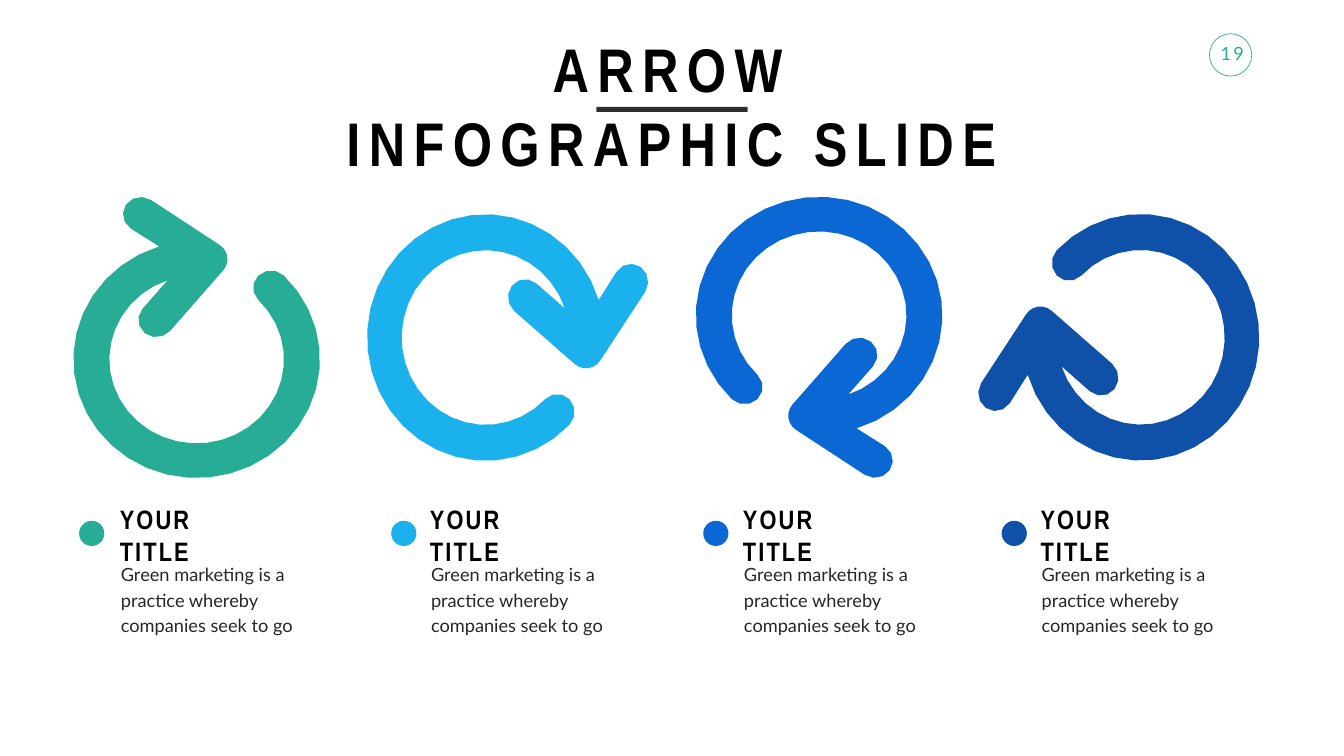
from dataclasses import dataclass
from math import cos, radians, sin

from pptx import Presentation
from pptx.dml.color import RGBColor
from pptx.enum import shapes, text
from pptx.util import Pt

HEADING_FONT, BODY_FONT = "Arial Narrow", "Lato"
BLACK, DARK_RULE, BODY_GREY = "000000", "2E2E2E", "272727"

# Arrow outline, in points inside its own frame; angles run clockwise from the right
ARROW_TOP, ARROW_WIDTH, ARROW_HEIGHT = 281.5, 351.4, 401
RING_CENTER = (184, 233)
OUTER_RADIUS, INNER_RADIUS, CAP_RADIUS = 168, 119, 24.5
RING_START = -45
LOWER_BARB, TIP, UPPER_BARB = (129, 177), (201.5, 91), (108, 27.4)
LOWER_SIDE, UPPER_SIDE = 40, -56
RING_STEPS, CAP_STEPS = 30, 6
UNITS_PER_POINT = 10


@dataclass
class Column:
    color: str
    rotation: int
    arrow_left: float
    dot_left: float
    text_left: float


COLUMNS = [
    Column("27AC95", 0, 105, 113, 164),
    Column("1BB1EC", 90, 549.4, 558.7, 607),
    Column("0A67D4", 180, 994.3, 1004.4, 1054),
    Column("0F51A9", 270, 1422, 1430.6, 1479),
]


def rgb(color: str) -> RGBColor:
    return RGBColor.from_string(color)


def arc(center: tuple, radius: float, start: float, end: float, steps: int) -> list[tuple]:
    """Evenly spaced points along an arc."""
    angles = [radians(start + (end - start) * i / steps) for i in range(steps + 1)]
    return [(center[0] + radius * cos(a), center[1] + radius * sin(a)) for a in angles]


def arrow_outline() -> list[tuple]:
    """Open ring with a round start, ending in a two-barbed head."""
    middle_radius = (OUTER_RADIUS + INNER_RADIUS) / 2
    start_cap = arc(RING_CENTER, middle_radius, RING_START, 0, 1)[0]
    return (
        arc(start_cap, CAP_RADIUS, RING_START, RING_START - 180, CAP_STEPS)
        + arc(RING_CENTER, INNER_RADIUS, RING_START, 250.6, RING_STEPS)
        + arc(LOWER_BARB, CAP_RADIUS, LOWER_SIDE + 180, LOWER_SIDE, CAP_STEPS)
        + arc(TIP, CAP_RADIUS, LOWER_SIDE, UPPER_SIDE, CAP_STEPS)
        + arc(UPPER_BARB, CAP_RADIUS, UPPER_SIDE, UPPER_SIDE - 180, CAP_STEPS)
        + arc(RING_CENTER, OUTER_RADIUS, 252.3, RING_START, RING_STEPS)
    )


def paint(shape, color: str) -> None:
    shape.shadow.inherit = False
    shape.fill.solid()
    shape.fill.fore_color.rgb = rgb(color)
    shape.line.fill.background()


def add_solid(slide, kind, left: float, top: float, width: float, height: float, color: str):
    shape = slide.shapes.add_shape(kind, Pt(left), Pt(top), Pt(width), Pt(height))
    paint(shape, color)
    return shape


def place(shape, left: float, top: float, width: float, height: float) -> None:
    shape.left, shape.top, shape.width, shape.height = Pt(left), Pt(top), Pt(width), Pt(height)


def add_arrow(slide, column: Column) -> None:
    points = [(x * UNITS_PER_POINT, y * UNITS_PER_POINT) for x, y in arrow_outline()]
    builder = slide.shapes.build_freeform(*points[0], scale=Pt(1) / UNITS_PER_POINT)
    builder.add_line_segments(points[1:], close=True)
    arrow = builder.convert_to_shape()
    place(arrow, column.arrow_left, ARROW_TOP, ARROW_WIDTH, ARROW_HEIGHT)
    arrow.rotation = column.rotation
    paint(arrow, column.color)


def write(shape, words: str, font: str, size: float, color: str, *, bold: bool = False,
          spacing: float = 0, align=text.PP_ALIGN.LEFT, anchor=text.MSO_ANCHOR.TOP,
          wrap: bool = True):
    frame = shape.text_frame
    frame.word_wrap = wrap
    frame.auto_size = text.MSO_AUTO_SIZE.NONE
    frame.vertical_anchor = anchor
    paragraph = frame.paragraphs[0]
    paragraph.alignment = align
    run = paragraph.add_run()
    run.text = words
    run.font.name, run.font.size, run.font.bold = font, Pt(size), bold
    run.font.color.rgb = rgb(color)
    if spacing:
        run.font._element.set("spc", str(round(spacing * 100)))
    return paragraph


def add_text_box(slide, left: float, top: float, width: float, height: float):
    return slide.shapes.add_textbox(Pt(left), Pt(top), Pt(width), Pt(height))


def add_caption(slide, column: Column) -> None:
    add_solid(slide, shapes.MSO_SHAPE.OVAL, column.dot_left, 744, 36, 36, column.color)
    heading = add_text_box(slide, column.text_left, 737.3, 173.5, 53.3)
    write(heading, "YOUR TITLE", HEADING_FONT, 38, BLACK, bold=True, spacing=3,
          anchor=text.MSO_ANCHOR.MIDDLE)

    description = add_text_box(slide, column.text_left - 8.7, 789.8, 292.3, 125.3)
    frame = description.text_frame
    frame.margin_left = frame.margin_right = Pt(17.3)
    frame.margin_top = frame.margin_bottom = Pt(8.6)
    paragraph = write(description, "Green marketing is a practice whereby companies seek to go",
                      BODY_FONT, 26, BODY_GREY)
    paragraph.line_spacing = Pt(37)
    paragraph.space_before = Pt(5.2)


def main() -> None:
    presentation = Presentation()
    presentation.slide_width, presentation.slide_height = Pt(1919.5), Pt(1080)
    slide = presentation.slides.add_slide(presentation.slide_layouts[5])

    # Page number in its ring
    number = add_text_box(slide, 1732.3, 56.2, 55.4, 38.9)
    write(number, "19", BODY_FONT, 26, "27AC95", spacing=3,
          align=text.PP_ALIGN.CENTER, wrap=False)
    ring = add_solid(slide, shapes.MSO_SHAPE.OVAL, 1727.3, 48.2, 60.5, 60.5, "FFFFFF")
    ring.fill.background()
    ring.line.color.rgb = rgb("27AC95")
    ring.line.width = Pt(1)

    # Title and its rule
    title = slide.shapes.title
    place(title, 452.9, 40.3, 1013, 113.8)
    write(title, "ARROW INFOGRAPHIC SLIDE", HEADING_FONT, 88, BLACK, bold=True, spacing=12,
          align=text.PP_ALIGN.CENTER)
    add_solid(slide, shapes.MSO_SHAPE.RECTANGLE, 851.8, 152.6, 216, 7.2, DARK_RULE)

    # Arrows with their captions
    for column in COLUMNS:
        add_arrow(slide, column)
        add_caption(slide, column)

    presentation.save("out.pptx")


if __name__ == "__main__":
    main()
